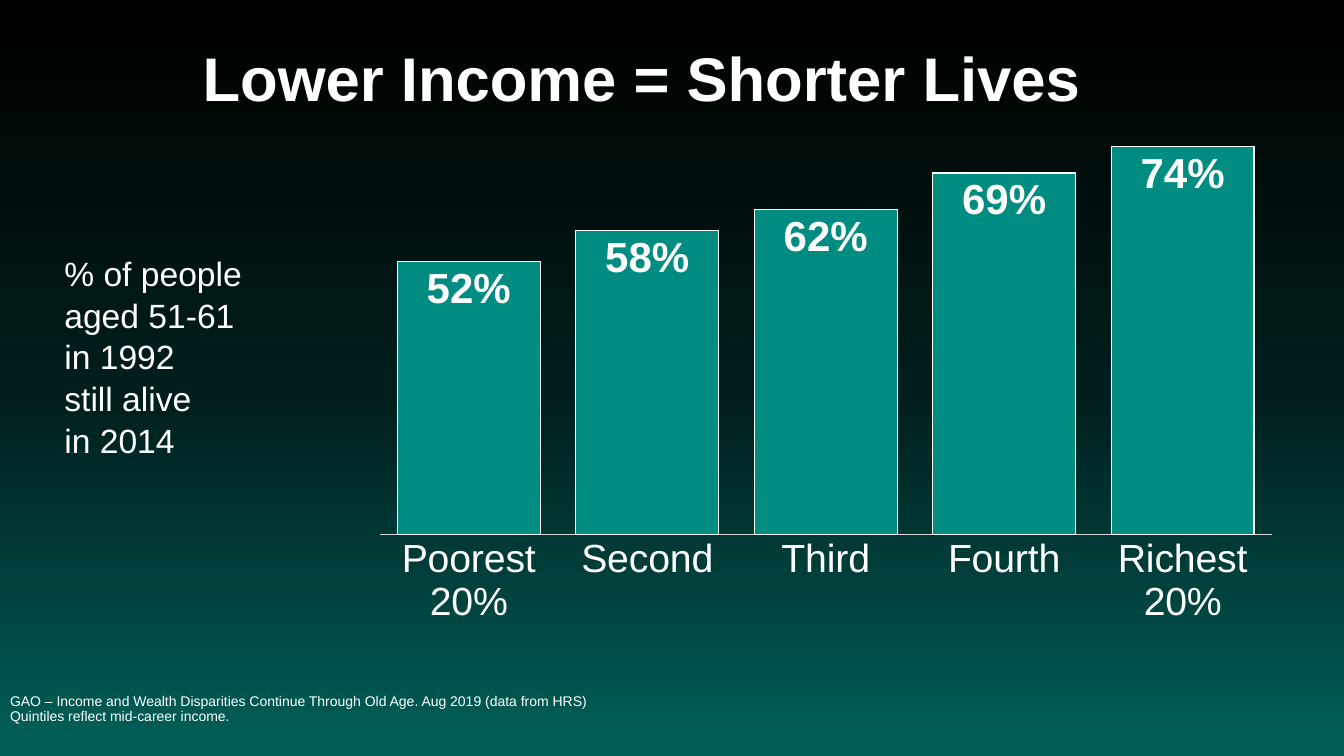
import copy
from dataclasses import dataclass

import lxml.etree
import pptx
import pptx.chart.data
import pptx.dml.color
import pptx.enum.chart
import pptx.enum.text
import pptx.oxml
import pptx.oxml.ns
import pptx.util

Inches = pptx.util.Inches
Pt = pptx.util.Pt
qn = pptx.oxml.ns.qn


@dataclass(frozen=True)
class Theme:
    """Colours, type sizes and font of the slide."""
    font: str = "Arial"
    text: str = "FFFFFF"
    bar: str = "008C81"
    axis: str = "D9D9D9"
    backdrop: tuple = ((0, "000000"), (0.52, "001E1C"), (1, "006059"))
    title_size: int = 44
    value_size: int = 30
    category_size: int = 28
    caption_size: int = 24
    source_size: int = 10


THEME = Theme()
SURVIVAL = {
    "Poorest 20%": 0.52,
    "Second": 0.58,
    "Third": 0.62,
    "Fourth": 0.69,
    "Richest\n20%": 0.74,
}


def color(value):
    """Turn a hex string into a colour."""
    return pptx.dml.color.RGBColor.from_string(value)


def style_font(font, size, bold=False):
    """Apply the theme font and text colour."""
    font.name = THEME.font
    font.size = Pt(size)
    font.bold = bold
    font.color.rgb = color(THEME.text)


def place(shape, box):
    """Move a shape to a box given in inches."""
    shape.left, shape.top, shape.width, shape.height = map(Inches, box)


def write(shape, text, size, line_spacing, bold=False):
    """Write one left-aligned paragraph, with line breaks kept."""
    frame = shape.text_frame
    frame.word_wrap = True
    frame.auto_size = pptx.enum.text.MSO_AUTO_SIZE.NONE
    paragraph = frame.paragraphs[0]
    paragraph.text = text.replace("\n", "\v")
    paragraph.alignment = pptx.enum.text.PP_ALIGN.LEFT
    paragraph.line_spacing = line_spacing
    paragraph.space_before = Pt(0)
    style_font(paragraph.font, size, bold)


def paint_background(slide):
    """Fill the background with a vertical three-colour gradient."""
    fill = slide.background.fill
    fill.gradient()
    fill.gradient_angle = 270
    stop_list = slide.element.find(".//" + qn("a:gsLst"))
    stop_list.append(copy.deepcopy(stop_list[-1]))
    for stop, (position, value) in zip(fill.gradient_stops, THEME.backdrop):
        stop.position = position
        stop.color.rgb = color(value)


def add_title(slide, box):
    """Place the title in its box."""
    title = slide.shapes.title
    place(title, box)
    write(title, "Lower Income = Shorter Lives", THEME.title_size, 0.9, True)
    title.text_frame.vertical_anchor = pptx.enum.text.MSO_ANCHOR.MIDDLE


def add_source(slide, box):
    """Place the unbulleted source note in the body placeholder."""
    source = slide.placeholders[1]
    place(source, box)
    properties = source.text_frame.paragraphs[0]._p.get_or_add_pPr()
    properties.set("marL", "0")
    properties.set("indent", "0")
    lxml.etree.SubElement(properties, qn("a:buNone"))
    write(source,
          "GAO – Income and Wealth Disparities Continue Through Old Age. "
          "Aug 2019 (data from HRS)\nQuintiles reflect mid-career income.",
          THEME.source_size, 0.9)
    source.text_frame.vertical_anchor = pptx.enum.text.MSO_ANCHOR.MIDDLE


def add_caption(slide, box):
    """Explain what the bars measure."""
    caption = slide.shapes.add_textbox(*map(Inches, box))
    write(caption, "% of people\naged 51-61\nin 1992\nstill alive\nin 2014",
          THEME.caption_size, 1.04)


def fix_plot_area(chart, x, y, width, height):
    """Set the inner plot area as fractions of the chart."""
    plot_area = chart.element.find(".//" + qn("c:plotArea"))
    layout = plot_area.find(qn("c:layout"))
    if layout is None:
        layout = lxml.etree.Element(qn("c:layout"))
        plot_area.insert(0, layout)
    manual = lxml.etree.SubElement(layout, qn("c:manualLayout"))
    settings = {"layoutTarget": "inner", "xMode": "edge", "yMode": "edge",
                "x": x, "y": y, "w": width, "h": height}
    for name, value in settings.items():
        lxml.etree.SubElement(manual, qn("c:" + name)).set("val", str(value))


def add_survival_chart(slide, box):
    """Draw the survival rate of each income group as columns."""
    data = pptx.chart.data.CategoryChartData(number_format="0%")
    data.categories = list(SURVIVAL)
    data.add_series("Series 1", list(SURVIVAL.values()))
    chart = slide.shapes.add_chart(
        pptx.enum.chart.XL_CHART_TYPE.COLUMN_CLUSTERED,
        *map(Inches, box), data).chart
    chart.has_legend = False
    chart.has_title = False
    style_font(chart.font, THEME.category_size)
    fix_plot_area(chart, 0.02, 0.02, 0.96, 0.79)

    value_axis = chart.value_axis
    value_axis.minimum_scale = 0
    value_axis.maximum_scale = 0.8
    value_axis.has_major_gridlines = False
    value_axis.visible = False

    category_axis = chart.category_axis
    category_axis.major_tick_mark = pptx.enum.chart.XL_TICK_MARK.NONE
    category_axis.format.line.color.rgb = color(THEME.axis)
    category_axis.format.line.width = Pt(0.75)
    style_font(category_axis.tick_labels.font, THEME.category_size)

    plot = chart.plots[0]
    plot.gap_width = 25
    plot.overlap = -27
    plot.vary_by_categories = False
    series = plot.series[0]
    series.format.fill.solid()
    series.format.fill.fore_color.rgb = color(THEME.bar)
    series.format.line.color.rgb = color(THEME.text)
    series.format.line.width = Pt(0.75)

    labels = series.data_labels
    labels.show_value = True
    labels.number_format = "0%"
    labels.number_format_is_linked = False
    labels.position = pptx.enum.chart.XL_LABEL_POSITION.INSIDE_END
    style_font(labels.font, THEME.value_size, True)


def main():
    """Build and save the slide."""
    presentation = pptx.Presentation()
    presentation.slide_width = Inches(13.33)
    presentation.slide_height = Inches(7.5)
    slide = presentation.slides.add_slide(presentation.slide_layouts[1])
    paint_background(slide)
    add_title(slide, (1.91, 0.08, 11.5, 1.45))
    add_source(slide, (0, 6.58, 9.33, 0.92))
    add_caption(slide, (0.54, 2.44, 2.71, 2.12))
    add_survival_chart(slide, (3.58, 1.04, 9.22, 5.26))
    presentation.save("out.pptx")


if __name__ == "__main__":
    main()
